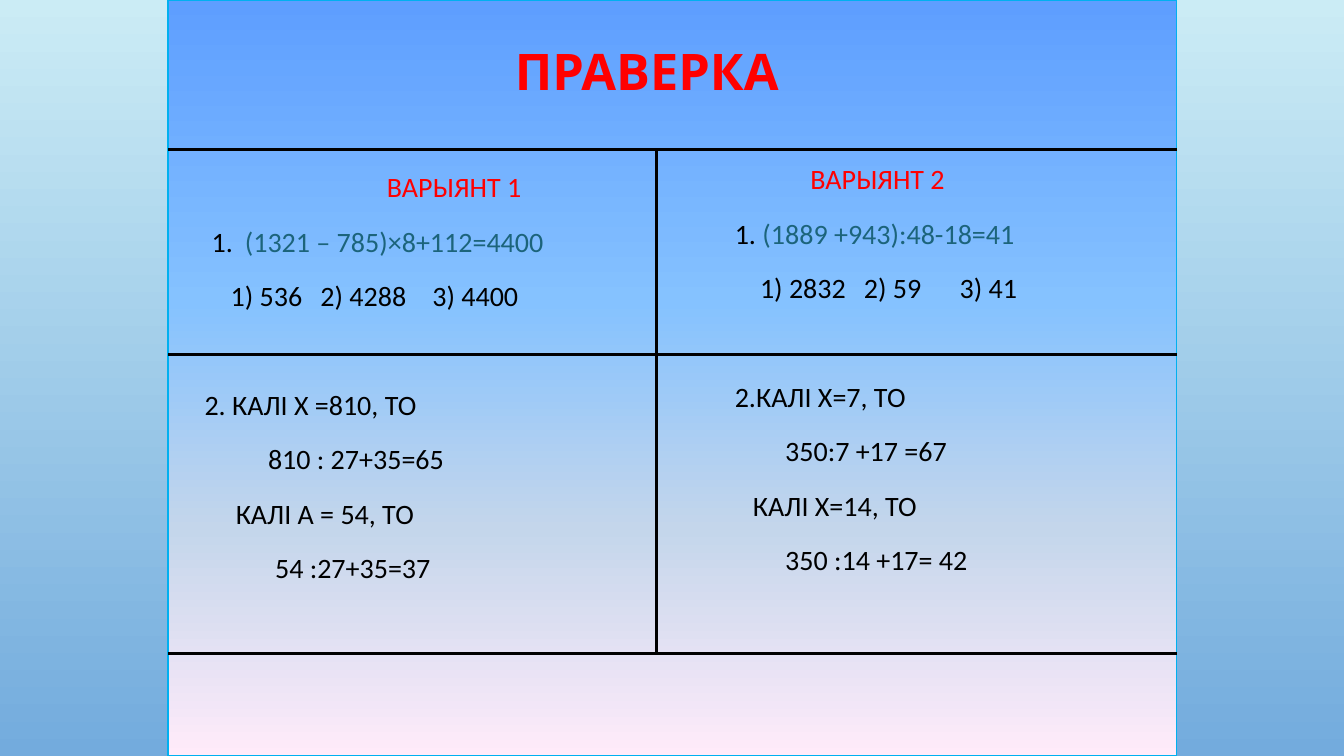
from copy import deepcopy

from lxml import etree
from pptx import Presentation
from pptx.dml.color import RGBColor
from pptx.enum.shapes import MSO_CONNECTOR as CONN, MSO_SHAPE as SHAPE
from pptx.enum.text import MSO_ANCHOR as ANCHOR, PP_ALIGN as ALIGN
from pptx.oxml.ns import qn
from pptx.util import Inches, Pt

RED, BLACK, TEAL = "FF0000", "000000", "1C647B"
rgb = RGBColor.from_string


def set_gradient(fill, stops):
    """Fill the newest object on the slide from top to bottom."""
    fill.gradient()
    fill.gradient_angle = 270
    gs_list = s._element.xpath(".//a:gradFill/a:gsLst")[-1]
    for _ in stops[2:]:
        gs_list.append(deepcopy(gs_list[0]))
    for stop, (position, color) in zip(fill.gradient_stops, stops):
        stop.position = position
        stop.color.rgb = rgb(color)


def add_run(p, text, color, **font):
    r = p.add_run()
    r.text = text
    r.font.color.rgb = rgb(color)
    for name, value in font.items():
        setattr(r.font, name, value)


prs = Presentation()
prs.slide_width, prs.slide_height = Inches(13.33), Inches(7.5)
s = prs.slides.add_slide(prs.slide_layouts[5])
set_gradient(s.background.fill, [(0, "CBECF5"), (1, "73ABDD")])

# Panel behind the title
panel = s.shapes.add_shape(SHAPE.RECTANGLE, Inches(1.67), 0, Inches(10), prs.slide_height)
panel.shadow.inherit = False
set_gradient(panel.fill, [(0, "5E9EFF"), (0.4, "85C2FF"), (0.7, "C4D6EB"), (1, "FFEBFA")])
panel.line.color.rgb = rgb("00B0F0")
panel.line.width = Pt(1.25)
s.shapes._spTree.insert(2, panel._element)

title = s.shapes.title
title.left, title.top, title.width, title.height = map(Inches, (0.75, -0.14, 11.33, 1.75))
tf = title.text_frame
tf.vertical_anchor = ANCHOR.MIDDLE
p = tf.paragraphs[0]
p.alignment = ALIGN.CENTER
p.line_spacing = 0.9
add_run(p, "ПРАВЕРКА", RED, size=Pt(36), name="Comic Neue", bold=True)

# Each line: start of every tabbed part in inches, then runs of text and colour
variants = [
    ((6.93, 1.49, 4.66, 4.95), [
        ([1.01], [("ВАРЫЯНТ 2", RED)]),
        ([0.26], [("1.", BLACK), (" (1889 +943):48-18=41", TEAL)]),
        ([0.51, 1.54, 2.49], [("\t1) 2832\t2) 59\t3) 41", BLACK)]),
        ([0.26], [("2.КАЛІ Х=7, ТО", BLACK)]),
        ([0.76], [("350:7 +17 =67", BLACK)]),
        ([0.44], [("КАЛІ Х=14, ТО", BLACK)]),
        ([0.76], [("350 :14 +17= 42", BLACK)]),
    ]),
    ((1.93, 1.57, 5.08, 4.95), [
        ([1.81], [("ВАРЫЯНТ 1", RED)]),
        ([0.07, 0.4], [("\t1.", BLACK), ("\t(1321 – 785)×8+112=4400", TEAL)]),
        ([0.26, 1.15, 2.26], [("\t1) 536\t2) 4288\t3) 4400", BLACK)]),
        ([0], [("2. КАЛІ Х =810, ТО", BLACK)]),
        ([0.63], [("810 : 27+35=65", BLACK)]),
        ([0.31], [("КАЛІ А = 54, ТО", BLACK)]),
        ([0.7], [("54 :27+35=37", BLACK)]),
    ]),
]
SECOND_TASK = 3
for box, lines in variants:
    tf = s.shapes.add_textbox(*map(Inches, box)).text_frame
    tf.word_wrap = True
    for i, (starts, runs) in enumerate(lines):
        p = tf.add_paragraph() if i else tf.paragraphs[0]
        p.line_spacing = 1.2
        p.space_before = Pt(0 if i == 0 else 49 if i == SECOND_TASK else 10)
        pPr = p._p.get_or_add_pPr()
        if len(starts) == 1:
            pPr.set("marL", str(Inches(starts[0])))
        else:
            tabs = etree.SubElement(pPr, qn("a:tabLst"))
            for start in starts:
                etree.SubElement(tabs, qn("a:tab"), pos=str(Inches(start)), algn="l")
        for text, color in runs:
            add_run(p, text, color, size=Pt(20), name="Calibri")

# Rules of the grid
left, middle, right = 1.67, 6.51, 11.67
top, center, bottom = 1.48, 3.52, 6.48
rules = [(left, y, right, y) for y in (top, center, bottom)]
rules.append((middle, top, middle, bottom))
for ends in rules:
    rule = s.shapes.add_connector(CONN.STRAIGHT, *map(Inches, ends))
    rule.line.color.rgb = rgb(BLACK)
    rule.line.width = Pt(2.25)
    etree.SubElement(rule._element.spPr, qn("a:effectLst"))

prs.save("out.pptx")
